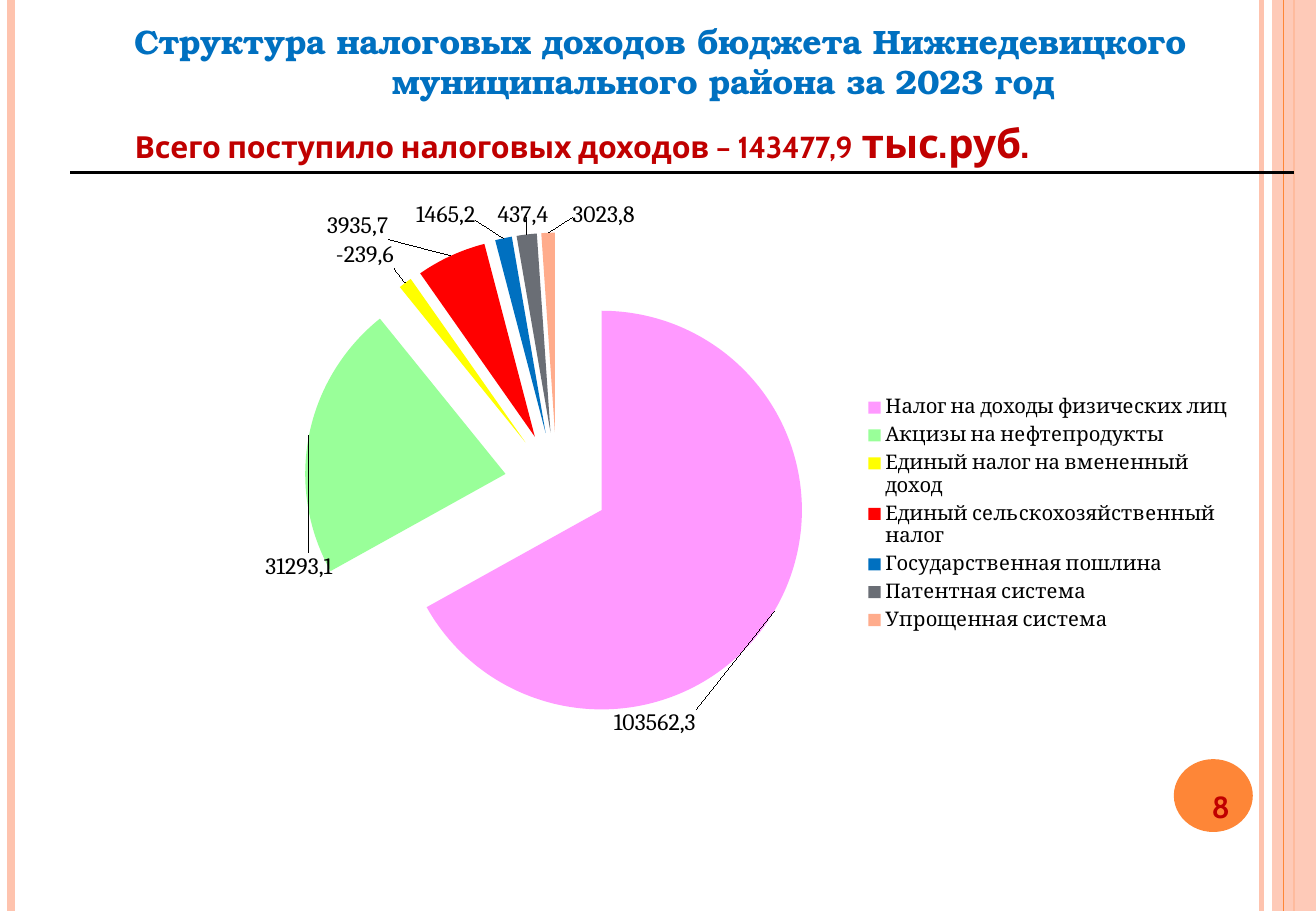
from lxml import etree
from pptx import Presentation, util as u
from pptx.chart.data import CategoryChartData
from pptx.dml.color import RGBColor
from pptx.enum import chart as ch, shapes, text
from pptx.oxml import parse_xml
from pptx.oxml.ns import nsdecls, qn

PX = 9144  # 100 px to the inch
SLIDE = (1083, 750)

TITLE = "Структура налоговых доходов бюджета Нижнедевицкого муниципального района за 2023 год"
SUBTITLE = [("Всего поступило налоговых доходов – 143477,9", 18), (" тыс.руб.", 24)]
NUMBER = [("8", 18)]
RED, ORANGE, PEACH = "C00000", "FE8637", "FEC3AE"

# x, colour, width in points
BACK_STRIPES = [(1038, PEACH, 3), (9, PEACH, 4.5), (1065, ORANGE, 1.5)]
FRONT_STRIPE = (1056, ORANGE, 0.75)

CHART_BOX = (85, 163, 940, 508)
PLOT_LAYOUT = (0.125, 0.052, 0.544, 0.818)
LEGEND_LAYOUT = (0.667, 0.31, 0.32, 0.4)
# category, value, label, colour, label shift in px
TAXES = [
    ("Налог на доходы физических лиц", 71360.2, "103562,3", "FF99FF", (-137, 78)),
    ("Акцизы на нефтепродукты", 23800.3, "31293,1", "99FF99", (25, 121)),
    ("Единый налог на вмененный доход", 1158.7, "-239,6", "FFFF00", (-6, -7)),
    ("Единый сельскохозяйственный налог", 6021.8, "3935,7", "FF0000", (-49, -8)),
    ("Государственная пошлина", 1438.4, "1465,2", "0070C0", (-22, -9)),
    ("Патентная система", 1729.1, "437,4", "6A6E75", (19, -8)),
    ("Упрощенная система", 1157.7, "3023,8", "FFAC8C", (46, -7)),
]


def px(*lengths):
    return [u.Emu(n * PX) for n in lengths]


def rgb(value):
    return RGBColor.from_string(value)


def set_alpha(fill, percent):
    color = fill._xPr.find(qn("a:solidFill"))[0]
    etree.SubElement(color, qn("a:alpha")).set("val", str(percent * 1000))


def add_line(s, x1, y1, x2, y2, color, width):
    line = s.shapes.add_connector(shapes.MSO_CONNECTOR.STRAIGHT, *px(x1, y1, x2, y2))
    line.line.color.rgb = rgb(color)
    line.line.width = u.Pt(width)
    etree.SubElement(line._element.spPr, qn("a:effectLst"))


def add_stripe(s, x, color, width):
    add_line(s, x, 0, x, SLIDE[1], color, width)


def add_block(s, kind, box, color):
    sp = s.shapes.add_shape(kind, *px(*box))
    sp.shadow.inherit = False
    sp.fill.solid()
    sp.fill.fore_color.rgb = rgb(color)
    sp.line.fill.background()
    return sp


def add_run(p, words, size, font, color, spacing):
    r = p.add_run()
    r.text = words
    r.font.size = u.Pt(size)
    r.font.name = font
    r.font.bold = True
    r.font.color.rgb = rgb(color)
    r._r.get_or_add_rPr().set("spc", str(spacing))


def add_text(s, box, runs):
    tf = s.shapes.add_textbox(*px(*box)).text_frame
    tf.word_wrap = True
    for words, size in runs:
        add_run(tf.paragraphs[0], words, size, "Cabin", RED, -10)
    return tf


def manual_layout(values, absolute=True, inner=False):
    parts = '<c:layoutTarget val="inner"/>' if inner else ""
    if absolute:
        parts += '<c:xMode val="edge"/><c:yMode val="edge"/>'
    parts += "".join(f'<c:{k} val="{v:.3f}"/>' for k, v in zip("xywh", values))
    return parse_xml(f'<c:layout {nsdecls("c")}><c:manualLayout>{parts}'
                     "</c:manualLayout></c:layout>")


def add_pie(s):
    data = CategoryChartData()
    data.categories = [tax[0] for tax in TAXES]
    data.add_series("Series 1", [tax[1] for tax in TAXES])
    chart = s.shapes.add_chart(ch.XL_CHART_TYPE.PIE, *px(*CHART_BOX), data).chart
    chart.has_title = False
    chart.font.name = "Cambria"
    chart.font.size = u.Pt(18)
    chart.font.color.rgb = rgb("000000")

    # Plot area and legend
    plot_area = chart._chartSpace.chart.plotArea
    for old in plot_area.findall(qn("c:layout")):
        plot_area.remove(old)
    plot_area.insert(0, manual_layout(PLOT_LAYOUT, inner=True))
    chart.has_legend = True
    legend = chart.legend
    legend.position = ch.XL_LEGEND_POSITION.RIGHT
    legend.include_in_layout = False
    legend.font.size = u.Pt(12)
    legend.font.name = "Cambria"
    for old in legend._element.findall(qn("c:layout")):
        legend._element.remove(old)
    legend._element.find(qn("c:legendPos")).addnext(manual_layout(LEGEND_LAYOUT))

    # Slices
    plot = chart.plots[0]
    plot.vary_by_categories = True
    series = plot.series[0]
    series._element.find(qn("c:tx")).addnext(
        parse_xml(f'<c:explosion {nsdecls("c")} val="26"/>'))
    labels = series.data_labels
    labels.show_value = True
    labels.font.size = u.Pt(14)
    for i, (_, _, label, color, shift) in enumerate(TAXES):
        point = series.points[i]
        point.format.fill.solid()
        point.format.fill.fore_color.rgb = rgb(color)
        r = point.data_label.text_frame.paragraphs[0].add_run()
        r.text = label
        r.font.size = u.Pt(14)
        r.font.name = "Cambria"
        point.data_label.position = ch.XL_LABEL_POSITION.OUTSIDE_END
        offset = [d / size for d, size in zip(shift, CHART_BOX[2:])]
        label_xml = labels._element.findall(qn("c:dLbl"))[i]
        label_xml.find(qn("c:idx")).addnext(manual_layout(offset, absolute=False))

    # Leader lines
    for old in labels._element.findall(qn("c:showLeaderLines")):
        labels._element.remove(old)
    labels._element.append(parse_xml(f'<c:showLeaderLines {nsdecls("c")} val="1"/>'))


def main():
    prs = Presentation()
    prs.slide_width, prs.slide_height = px(*SLIDE)
    s = prs.slides.add_slide(prs.slide_layouts[5])

    # Side stripes and number disc
    for stripe in BACK_STRIPES:
        add_stripe(s, *stripe)
    band = add_block(s, shapes.MSO_SHAPE.RECTANGLE, (1047, 0, 36, 750), PEACH)
    set_alpha(band.fill, 87)
    add_stripe(s, *FRONT_STRIPE)
    add_block(s, shapes.MSO_SHAPE.OVAL, (966, 625, 65, 60), ORANGE)

    # Title and rule
    add_line(s, 58, 142, 1065, 142, "000000", 1.35)
    title = s.shapes.title
    title.left, title.top, title.width, title.height = px(17, 17, 1050, 67)
    tf = title.text_frame
    tf.margin_left = tf.margin_top = tf.margin_right = tf.margin_bottom = 0
    tf.vertical_anchor = text.MSO_ANCHOR.TOP
    tf.word_wrap = True
    tf.auto_size = text.MSO_AUTO_SIZE.NONE
    p = tf.paragraphs[0]
    p.alignment = text.PP_ALIGN.CENTER
    pPr = p._p.get_or_add_pPr()
    pPr.set("marL", str(106 * PX))
    pPr.set("indent", str(-104 * PX))
    add_run(p, TITLE, 20, "TeX Gyre Bonum", "0070C0", -20)

    # Subtitle, slide number and chart
    add_text(s, (101, 92, 957, 50), SUBTITLE)
    tf = add_text(s, (972, 635, 65, 57), NUMBER)
    tf.vertical_anchor = text.MSO_ANCHOR.MIDDLE
    tf.paragraphs[0].alignment = text.PP_ALIGN.CENTER
    add_pie(s)

    prs.save("out.pptx")


if __name__ == "__main__":
    main()
